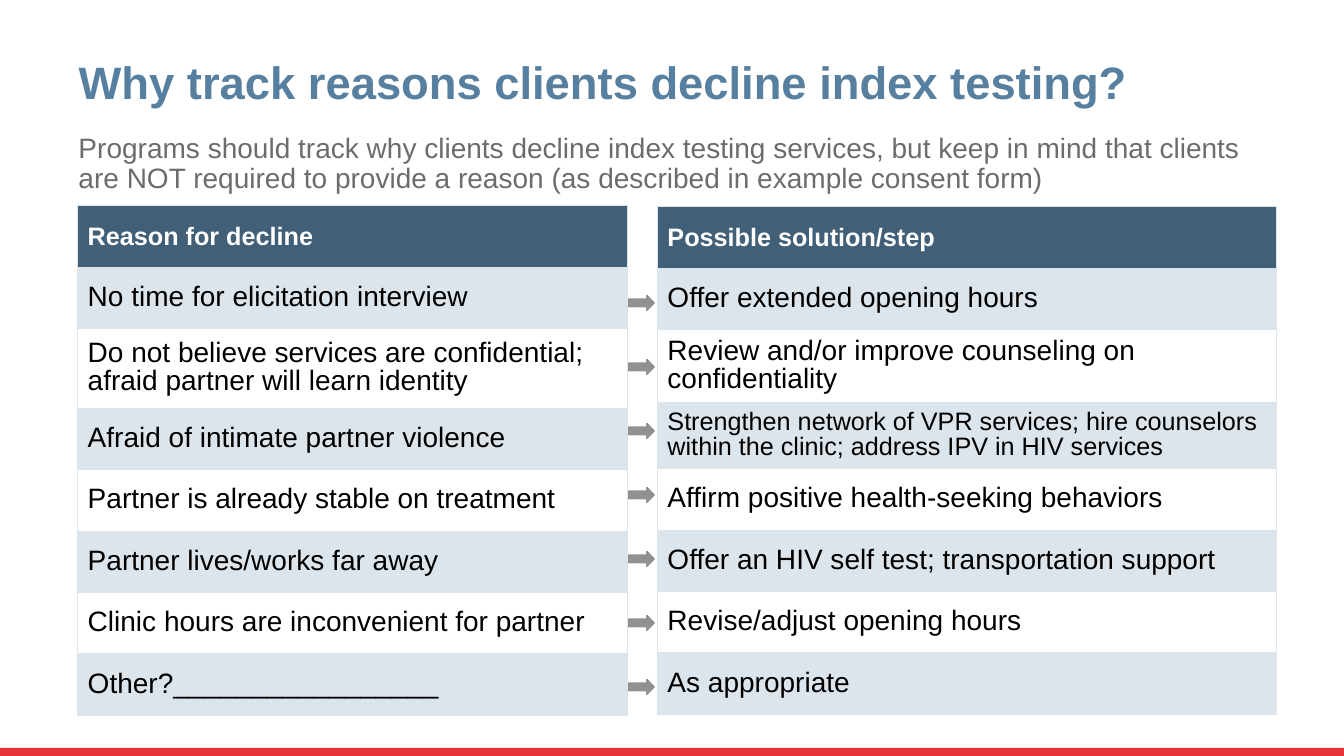
from dataclasses import dataclass

from lxml import etree
from pptx import Presentation, util as u
from pptx.dml.color import RGBColor
from pptx.enum import shapes, text
from pptx.oxml import ns

# Content
TITLE = "Why track reasons clients decline index testing?"
INTRO = ("Programs should track why clients decline index testing services, but keep in mind "
         "that clients are NOT required to provide a reason (as described in example consent form)")
REASONS = [
    "Reason for decline",
    "No time for elicitation interview",
    "Do not believe services are confidential; afraid partner will learn identity",
    "Afraid of intimate partner violence",
    "Partner is already stable on treatment",
    "Partner lives/works far away",
    "Clinic hours are inconvenient for partner",
    "Other?_________________",
]
SOLUTIONS = [
    "Possible solution/step",
    "Offer extended opening hours",
    "Review and/or improve counseling on confidentiality",
    "Strengthen network of VPR services; hire counselors within the clinic; "
    "address IPV in HIV services",
    "Affirm positive health-seeking behaviors",
    "Offer an HIV self test; transportation support",
    "Revise/adjust opening hours",
    "As appropriate",
]
DENSE_ROW = 3  # the long solution is set smaller


@dataclass(frozen=True)
class Theme:
    font: str = "Arial"
    title: str = "577F9F"
    intro: str = "6C6C6F"
    header: str = "415F77"
    band: str = "DDE5EC"
    white: str = "FFFFFF"
    body: str = "000000"
    arrow: str = "919194"
    accent: str = "E73439"
    title_size: float = 32.4
    body_size: float = 20
    small_size: float = 18


THEME = Theme()

# Grid, in inches
WIDTH, HEIGHT = 13.33, 7.5
TEXT_LEFT = 0.68
ROW = 0.61
REASON_BOX = (0.77, 2.04, 5.45)
SOLUTION_BOX = (6.52, 2.05, 6.14)
REASON_ROWS = [ROW, ROW, 0.79] + [ROW] * 5
SOLUTION_ROWS = [ROW, ROW, 0.72, 0.66] + [ROW] * 4
ARROW_LEFT, ARROW_TOP, ARROW_STEP = 6.23, 2.93, 0.635
BAR_HEIGHT = 0.08


def inches(*lengths):
    return [u.Inches(length) for length in lengths]


def write(frame, words, size, color, bold=False, spacing=0.9):
    frame.text = words
    frame.word_wrap = True
    paragraph = frame.paragraphs[0]
    paragraph.alignment = text.PP_ALIGN.LEFT
    paragraph.line_spacing = spacing
    font = paragraph.runs[0].font
    font.name, font.size, font.bold = THEME.font, u.Pt(size), bold
    font.color.rgb = RGBColor.from_string(color)
    return paragraph


def add_block(slide, kind, box, color):
    block = slide.shapes.add_shape(kind, *inches(*box))
    block.shadow.inherit = False
    block.fill.solid()
    block.fill.fore_color.rgb = RGBColor.from_string(color)
    block.line.fill.background()
    return block


def add_borders(cell):
    properties = cell._tc.get_or_add_tcPr()
    for position, side in enumerate(("lnL", "lnR", "lnT", "lnB")):
        border = etree.Element(ns.qn(f"a:{side}"), w=str(u.Pt(1)))
        fill = etree.SubElement(border, ns.qn("a:solidFill"))
        etree.SubElement(fill, ns.qn("a:srgbClr"), val=THEME.band)
        properties.insert(position, border)


def add_list(slide, entries, box, heights, dense_row=None):
    left, top, width = box
    frame = slide.shapes.add_table(
        len(entries), 1, *inches(left, top, width, sum(heights)))
    table = frame.table
    for row, (entry, height) in enumerate(zip(entries, heights)):
        table.rows[row].height = u.Inches(height)
        cell = table.cell(row, 0)
        cell.vertical_anchor = text.MSO_ANCHOR.MIDDLE
        cell.fill.solid()
        if row == 0:
            fill = THEME.header
            write(cell.text_frame, entry, THEME.small_size, THEME.white, True, 1.0)
        else:
            fill = THEME.band if row % 2 else THEME.white
            size = THEME.small_size if row == dense_row else THEME.body_size
            write(cell.text_frame, entry, size, THEME.body)
        cell.fill.fore_color.rgb = RGBColor.from_string(fill)
        add_borders(cell)


def main():
    deck = Presentation()
    deck.slide_width, deck.slide_height = inches(WIDTH, HEIGHT)
    slide = deck.slides.add_slide(deck.slide_layouts[5])

    # Bottom bar
    add_block(slide, shapes.MSO_SHAPE.RECTANGLE,
              (0, HEIGHT - BAR_HEIGHT, WIDTH, BAR_HEIGHT), THEME.accent)

    # Arrows from each reason to its solution
    for step in range(len(REASONS) - 1):
        arrow = add_block(slide, shapes.MSO_SHAPE.RIGHT_ARROW,
                          (ARROW_LEFT, ARROW_TOP + step * ARROW_STEP, 0.26, 0.15),
                          THEME.arrow)
        arrow.line.color.rgb = RGBColor.from_string(THEME.arrow)
        arrow.line.width = u.Pt(1)

    # Title and introduction
    title = slide.shapes.title
    title.left, title.top, title.width, title.height = inches(TEXT_LEFT, 0.4, 11.5, 0.88)
    title.text_frame.vertical_anchor = text.MSO_ANCHOR.MIDDLE
    write(title.text_frame, TITLE, THEME.title_size, THEME.title, True)
    intro = slide.shapes.add_textbox(*inches(TEXT_LEFT, 1.28, 11.99, 0.72))
    paragraph = write(intro.text_frame, INTRO, THEME.body_size, THEME.intro)
    paragraph.space_before = u.Pt(10)

    # Paired tables
    add_list(slide, REASONS, REASON_BOX, REASON_ROWS)
    add_list(slide, SOLUTIONS, SOLUTION_BOX, SOLUTION_ROWS, DENSE_ROW)

    deck.save("out.pptx")


if __name__ == "__main__":
    main()
